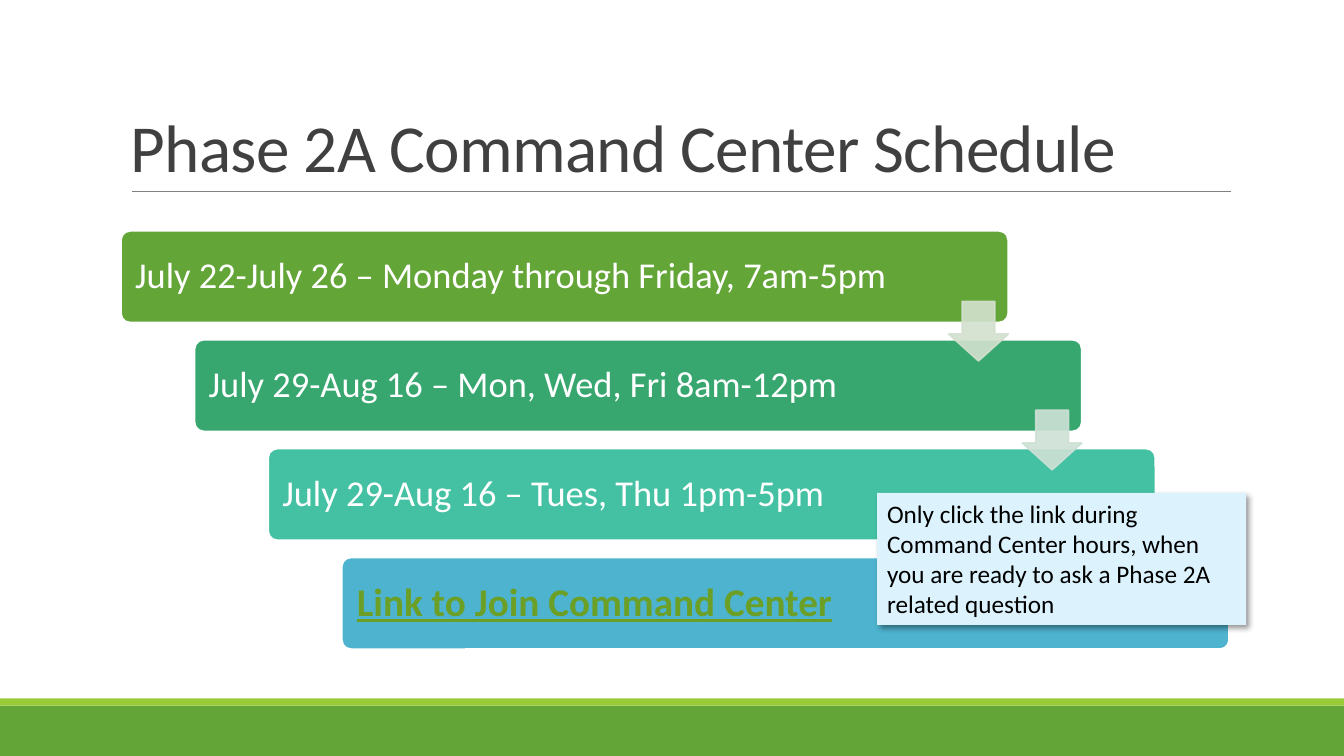
from lxml import etree
from pptx import Presentation
from pptx import util as u
from pptx.dml.color import RGBColor
from pptx.enum import shapes, text
from pptx.oxml.ns import qn

COLORS = {
    "white": "FFFFFF", "black": "000000", "title": "404040", "rule": "808080",
    "green": "63A537", "lime": "99CB38", "emerald": "37A76F", "teal": "44C1A3",
    "blue": "4EB3CF", "link": "6B9F25", "note": "DCF3FE",
    "arrow1": "D3E1CE", "arrow2": "CEE1D5",
}
SHAPE = shapes.MSO_SHAPE
ANCHOR = text.MSO_ANCHOR


class Deck:
    """Holds the slide style and the current slide, and adds its elements."""

    font = "Calibri"

    def __init__(self, prs):
        self.s = prs.slides.add_slide(prs.slide_layouts[6])

    def color(self, name):
        return RGBColor.from_string(COLORS[name])

    def shape(self, kind, box, fill, line=None, adj=(), alpha=None):
        sp = self.s.shapes.add_shape(kind, *map(u.Inches, box))
        sp.shadow.inherit = False
        for i, value in enumerate(adj):
            sp.adjustments[i] = value
        sp.fill.solid()
        sp.fill.fore_color.rgb = self.color(fill)
        if line:
            sp.line.color.rgb = self.color(line)
            sp.line.width = u.Pt(1.25)
        else:
            sp.line.fill.background()
        if alpha:
            for clr in sp._element.spPr.iter(qn("a:srgbClr")):
                etree.SubElement(clr, qn("a:alpha"), val=str(alpha * 1000))
        return sp

    def label(self, sp, words, size, color, anchor, inset=(0.1, 0.05),
              spacing=1.0, bold=False, underline=False):
        tf = sp.text_frame
        tf.word_wrap = True
        tf.vertical_anchor = anchor
        tf.margin_left = tf.margin_right = u.Inches(inset[0])
        tf.margin_top = tf.margin_bottom = u.Inches(inset[1])
        p = tf.paragraphs[0]
        p.alignment = text.PP_ALIGN.LEFT
        p.line_spacing = spacing
        r = p.add_run()
        r.text = words
        r.font.name = self.font
        r.font.size = u.Pt(size)
        r.font.color.rgb = self.color(color)
        r.font.bold = bold
        r.font.underline = underline
        return r

    def textbox(self, box, *args, **style):
        sp = self.s.shapes.add_textbox(*map(u.Inches, box))
        return self.label(sp, *args, **style)

    def title(self, box, words):
        r = self.textbox(box, words, 48, "title", ANCHOR.BOTTOM, spacing=0.85)
        r.font._element.set("spc", "-50")

    def rule(self, x1, x2, y):
        ln = self.s.shapes.add_connector(
            shapes.MSO_CONNECTOR.STRAIGHT, *map(u.Inches, (x1, y, x2, y)))
        ln.line.color.rgb = self.color("rule")
        ln.line.width = u.Pt(0.5)
        etree.SubElement(ln._element.spPr, qn("a:effectLst"))

    def step(self, x, y, fill, words, size=26, color="white", inset=0.11, **style):
        self.shape(SHAPE.ROUNDED_RECTANGLE, (x, y, 8.8, 0.91), fill, "white", (0.1,))
        self.textbox((x + 0.03, y + 0.03, 7.74, 0.86), words, size, color,
                     ANCHOR.MIDDLE, inset=(inset, inset), spacing=0.9, **style)

    def arrow(self, x, y, color):
        self.shape(SHAPE.DOWN_ARROW, (x, y, 0.59, 0.59), color, color,
                   (0.55, 0.45), alpha=90)

    def note(self, box, words):
        sp = self.shape(SHAPE.RECTANGLE, box, "note")
        self.label(sp, words, 18, "black", ANCHOR.TOP)
        effects = sp._element.spPr.find(qn("a:effectLst"))
        shadow = etree.SubElement(
            effects, qn("a:outerShdw"), blurRad=str(u.Pt(4)), dist=str(u.Pt(3)),
            dir=str(45 * 60000), algn="tl", rotWithShape="0")
        clr = etree.SubElement(shadow, qn("a:srgbClr"), val=COLORS["black"])
        etree.SubElement(clr, qn("a:alpha"), val="40000")


def main():
    prs = Presentation()
    prs.slide_width, prs.slide_height = u.Inches(13.33), u.Inches(7.5)
    deck = Deck(prs)
    deck.shape(SHAPE.RECTANGLE, (0, 7, 13.33, 0.5), "green")
    deck.shape(SHAPE.RECTANGLE, (0, 6.93, 13.33, 0.07), "lime")
    deck.rule(1.31, 12.21, 1.9)
    deck.title((1.2, 0.31, 11, 1.59), "Phase 2A Command Center Schedule")

    x, y, dx, dy = 1.2, 2.29, 0.73, 1.08
    link = dict(size=28, color="link", inset=0.12, bold=True, underline=True)
    steps = [
        ("green", "July 22-July 26 – Monday through Friday, 7am-5pm", {}),
        ("emerald", "July 29-Aug 16 – Mon, Wed, Fri 8am-12pm", {}),
        ("teal", "July 29-Aug 16 – Tues, Thu 1pm-5pm", {}),
        ("blue", "Link to Join Command Center", link),
    ]
    for i, (fill, words, style) in enumerate(steps):
        deck.step(x + i * dx, y + i * dy, fill, words, **style)
    for i, color in enumerate(("arrow1", "arrow2")):
        deck.arrow(9.41 + i * dx, 2.99 + i * dy, color)

    deck.note((8.7, 4.89, 3.66, 1.31),
              "Only click the link during Command Center hours, when you are "
              "ready to ask a Phase 2A related question")
    prs.save("out.pptx")


if __name__ == "__main__":
    main()
